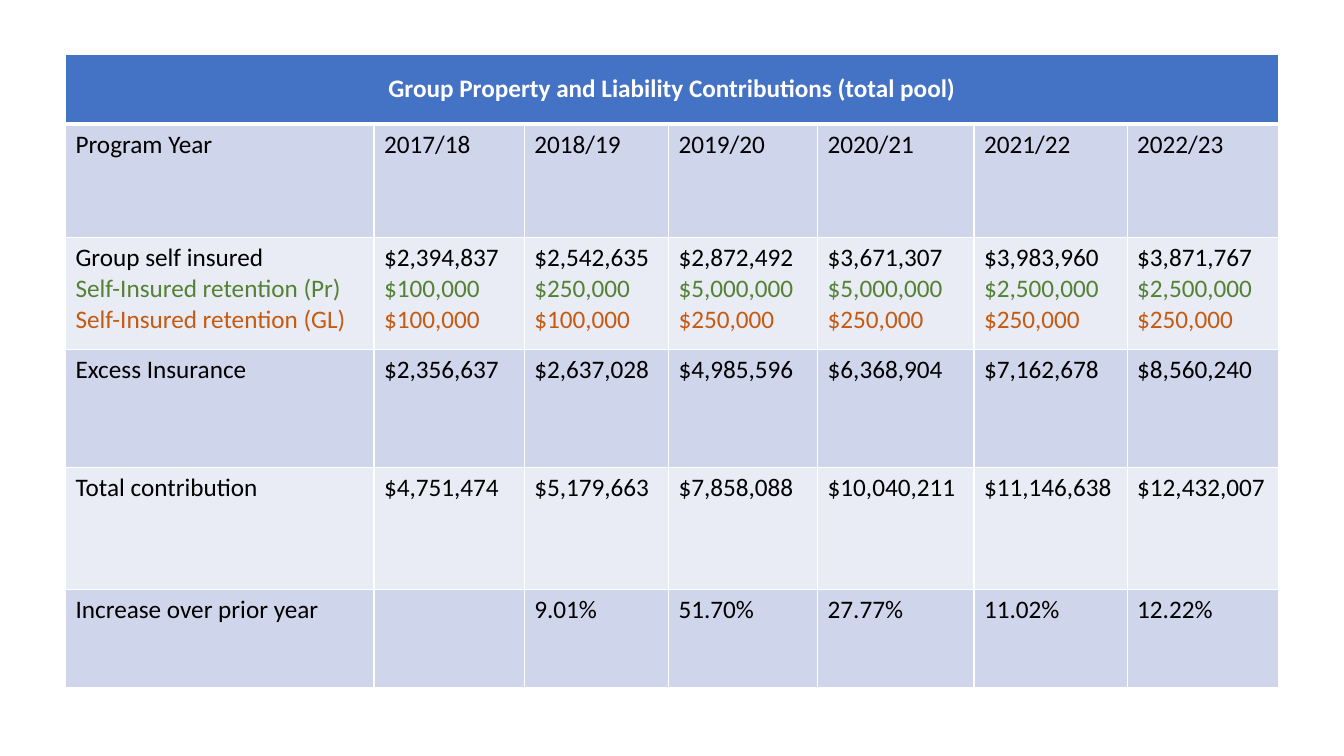
from dataclasses import dataclass

from lxml.etree import SubElement
from pptx import Presentation
from pptx.dml.color import RGBColor as Rgb
from pptx.enum.text import MSO_ANCHOR as Anchor, PP_ALIGN as Align
from pptx.oxml.ns import qn
from pptx.util import Inches, Pt


@dataclass(frozen=True)
class Theme:
    font: str = "Calibri"
    text_size: int = 18
    header: str = "4472C4"
    bands: tuple[str, str] = ("CFD5EA", "E9EBF5")
    rule: str = "FFFFFF"
    thin: int = 1
    thick: int = 3
    header_text: str = "FFFFFF"
    text: str = "000000"
    property_text: str = "548235"
    liability_text: str = "C55A11"


@dataclass(frozen=True)
class Line:
    """One line of a table row: its label, a value per year, and its colour."""
    label: str
    values: tuple[str, ...]
    color: str


@dataclass(frozen=True)
class Band:
    height: float
    lines: tuple[Line, ...]


THEME = Theme()
SLIDE_WIDTH, SLIDE_HEIGHT = 13.33, 7.5
LEFT, TOP = 0.65, 0.54
COLUMNS = (3.06, 1.49, 1.43, 1.48, 1.55, 1.52, 1.5)
HEADER_HEIGHT = 0.69
HEADING = "Group Property and Liability Contributions (total pool)"

BANDS = (
    Band(1.13, (
        Line("Program Year", ("2017/18", "2018/19", "2019/20", "2020/21",
                              "2021/22", "2022/23"), THEME.text),
    )),
    Band(1.11, (
        Line("Group self insured", ("$2,394,837", "$2,542,635", "$2,872,492", "$3,671,307",
                                    "$3,983,960", "$3,871,767"), THEME.text),
        Line("Self-Insured retention (Pr)", ("$100,000", "$250,000", "$5,000,000", "$5,000,000",
                                             "$2,500,000", "$2,500,000"), THEME.property_text),
        Line("Self-Insured retention (GL)", ("$100,000", "$100,000", "$250,000", "$250,000",
                                             "$250,000", "$250,000"), THEME.liability_text),
    )),
    Band(1.17, (
        Line("Excess Insurance", ("$2,356,637", "$2,637,028", "$4,985,596", "$6,368,904",
                                  "$7,162,678", "$8,560,240"), THEME.text),
    )),
    Band(1.21, (
        Line("Total contribution", ("$4,751,474", "$5,179,663", "$7,858,088", "$10,040,211",
                                    "$11,146,638", "$12,432,007"), THEME.text),
    )),
    Band(0.97, (
        Line("Increase over prior year", ("", "9.01%", "51.70%", "27.77%",
                                          "11.02%", "12.22%"), THEME.text),
    )),
)


def rule_cell(cell, top: int = THEME.thin, bottom: int = THEME.thin) -> None:
    """Draw the four borders; they must come before the fill in the cell's XML."""
    properties = cell._tc.get_or_add_tcPr()
    widths = {"a:lnL": THEME.thin, "a:lnR": THEME.thin, "a:lnT": top, "a:lnB": bottom}
    for place, (side, width) in enumerate(widths.items()):
        border = SubElement(properties, qn(side), w=str(Pt(width)))
        SubElement(SubElement(border, qn("a:solidFill")), qn("a:srgbClr"), val=THEME.rule)
        properties.insert(place, border)


def fill_cell(cell, color: str) -> None:
    cell.fill.solid()
    cell.fill.fore_color.rgb = Rgb.from_string(color)


def write_line(paragraph, words: str, color: str, bold: bool = False) -> None:
    font = paragraph.font
    if words:
        run = paragraph.add_run()
        run.text = words
        font = run.font
    for key, value in {"name": THEME.font, "size": Pt(THEME.text_size), "bold": bold}.items():
        setattr(font, key, value)
    font.color.rgb = Rgb.from_string(color)


def draw_header(table) -> None:
    for cell in table.rows[0].cells:
        fill_cell(cell, THEME.header)
        rule_cell(cell, bottom=THEME.thick)
    heading = table.cell(0, 0)
    heading.merge(table.cell(0, len(COLUMNS) - 1))
    heading.vertical_anchor = Anchor.MIDDLE
    paragraph = heading.text_frame.paragraphs[0]
    paragraph.alignment = Align.CENTER
    write_line(paragraph, HEADING, THEME.header_text, bold=True)


def draw_band(table, row: int, band: Band) -> None:
    for column, cell in enumerate(table.rows[row].cells):
        fill_cell(cell, THEME.bands[(row - 1) % 2])
        rule_cell(cell, top=THEME.thick if row == 1 else THEME.thin)
        frame = cell.text_frame
        for number, line in enumerate(band.lines):
            paragraph = frame.add_paragraph() if number else frame.paragraphs[0]
            write_line(paragraph, (line.label, *line.values)[column], line.color)


def main() -> None:
    deck = Presentation()
    deck.slide_width, deck.slide_height = Inches(SLIDE_WIDTH), Inches(SLIDE_HEIGHT)
    slide = deck.slides.add_slide(deck.slide_layouts[6])

    # Table grid
    heights = (HEADER_HEIGHT, *(band.height for band in BANDS))
    contributions = slide.shapes.add_table(
        len(heights), len(COLUMNS), Inches(LEFT), Inches(TOP),
        Inches(sum(COLUMNS)), Inches(sum(heights))).table
    for column, width in zip(contributions.columns, COLUMNS):
        column.width = Inches(width)
    for row, height in zip(contributions.rows, heights):
        row.height = Inches(height)

    # Heading, then one row per band
    draw_header(contributions)
    for number, band in enumerate(BANDS, start=1):
        draw_band(contributions, number, band)

    deck.save("out.pptx")


if __name__ == "__main__":
    main()
